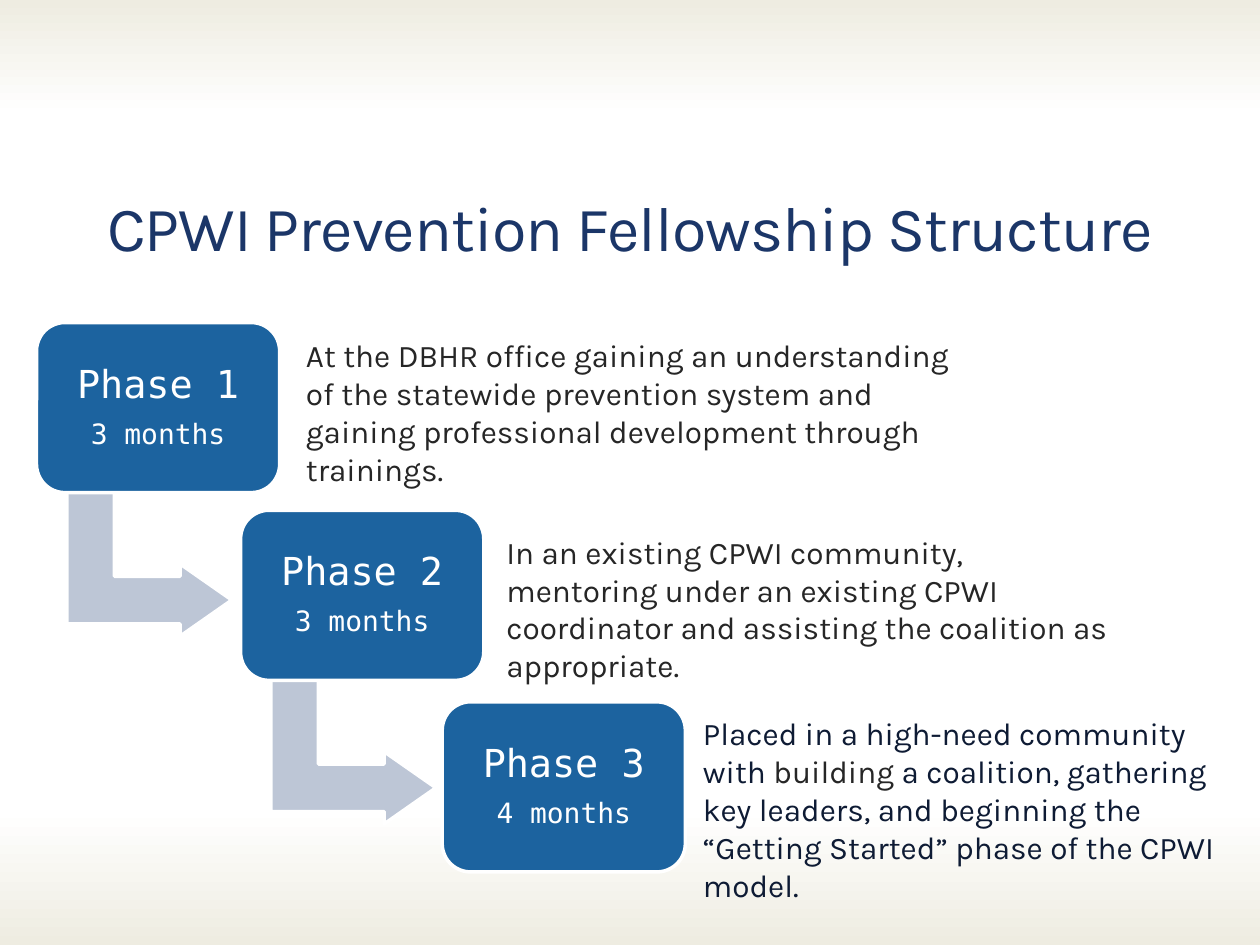
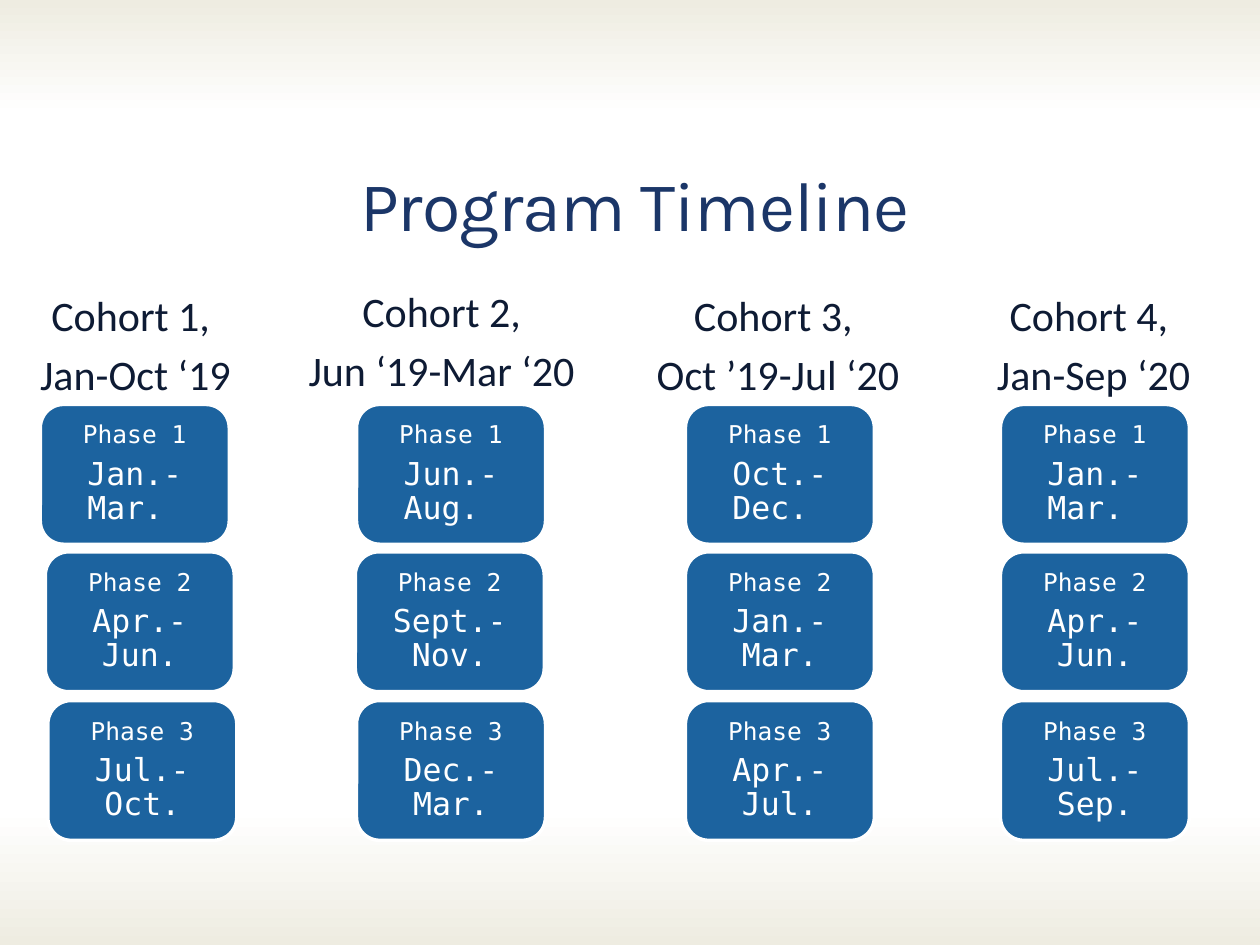
"""Build two slides on the structure and timeline of a prevention fellowship."""
import pptx
import pptx.dml.color
import pptx.enum.shapes
import pptx.enum.text
import pptx.util

Inches = pptx.util.Inches
Pt = pptx.util.Pt
SHAPE = pptx.enum.shapes.MSO_SHAPE
CENTER = pptx.enum.text.PP_ALIGN.CENTER
MIDDLE = pptx.enum.text.MSO_ANCHOR.MIDDLE
COLORS = {
    name: pptx.dml.color.RGBColor.from_string(value)
    for name, value in {
        "white": "FFFFFF",
        "sand": "EEECE1",
        "title": "1B3668",
        "navy": "0E1B34",
        "gray": "262626",
        "phase": "1C639F",
        "arrow": "BDC6D6",
    }.items()
}


def add_span(para, text, size, font, color):
    span = para.add_run()
    span.text = text
    span.font.size = Pt(size)
    span.font.name = font
    span.font.color.rgb = COLORS[color]
    return span


def add_outlined(page, kind, left, top, width, height, color):
    shape = page.shapes.add_shape(kind, Inches(left), Inches(top), Inches(width), Inches(height))
    shape.shadow.inherit = False
    shape.fill.solid()
    shape.fill.fore_color.rgb = COLORS[color]
    shape.line.color.rgb = COLORS["white"]
    shape.line.width = Pt(2)
    return shape


deck = pptx.Presentation()
deck.slide_width = Inches(10)
deck.slide_height = Inches(7.5)
layout = deck.slide_layouts[5]

titles = [
    ("CPWI Prevention Fellowship Structure", 36, 0.5, 1.17),
    ("Program Timeline", 40, 0.54, 0.99),
]
pages = []
for text, size, left, top in titles:
    page = deck.slides.add_slide(layout)
    pages.append(page)
    title = page.shapes.title
    title.left, title.top = Inches(left), Inches(top)
    title.width, title.height = Inches(9), Inches(1.25)
    title.text_frame.word_wrap = True
    title.text_frame.auto_size = pptx.enum.text.MSO_AUTO_SIZE.NONE
    title.text_frame.vertical_anchor = MIDDLE
    para = title.text_frame.paragraphs[0]
    para.alignment = CENTER
    span = add_span(para, text, size, "Karla", "title")
    span.font._element.set("spc", "-50")
structure, timeline = pages

for top, height, rotation in [(0, 0.92, 0), (6.42, 1.08, 180)]:
    band = structure.shapes.add_shape(
        SHAPE.RECTANGLE, 0, Inches(top), deck.slide_width, Inches(height)
    )
    band.shadow.inherit = False
    band.rotation = rotation
    band.line.fill.background()
    band.fill.gradient()
    band.fill.gradient_angle = 270
    for stop, color in zip(band.fill.gradient_stops, ("sand", "white")):
        stop.color.rgb = COLORS[color]
    layout.shapes.element.insert(2, band.element)

phases = [
    (0.29, 2.56, "3 months"),
    (1.91, 4.05, "3 months"),
    (3.51, 5.57, "4 months"),
]
phase_boxes = []
for number, (left, top, duration) in enumerate(phases, 1):
    if number < len(phases):
        arrow = add_outlined(
            structure, SHAPE.BENT_UP_ARROW, left + 0.32, top + 1.26, 1.15, 1.31, "arrow"
        )
        arrow.rotation = 90
        for index, value in enumerate((0.328, 0.25, 0.358)):
            arrow.adjustments[index] = value
    box = add_outlined(structure, SHAPE.ROUNDED_RECTANGLE, left, top, 1.93, 1.35, "phase")
    phase_boxes.append((box, [(f"Phase {number}", 22), (duration, 16)]))

descriptions = [
    (2.33, 2.62, 5.58, 1.01, [
        ("At the DBHR office gaining an understanding of the statewide prevention system "
         "and gaining professional development through trainings.", "gray"),
    ]),
    (3.92, 4.18, 5.08, 1.31, [
        ("In an existing CPWI community, mentoring under an existing CPWI coordinator "
         "and assisting the coalition as appropriate.", "gray"),
    ]),
    (5.48, 5.62, 4.52, 1.61, [
        ("Placed in a high-need community with ", "navy"),
        ("building", "gray"),
        (" a coalition, gathering key leaders, and beginning the “Getting Started” phase "
         "of the CPWI model.", "navy"),
    ]),
]
for left, top, width, height, spans in descriptions:
    box = structure.shapes.add_textbox(Inches(left), Inches(top), Inches(width), Inches(height))
    box.text_frame.word_wrap = True
    for text, color in spans:
        add_span(box.text_frame.paragraphs[0], text, 18, "Karla", color)

cohorts = [
    (0, 2.25, 2.15, ("Cohort 1, ", "Jan-Oct ‘19"),
     (0.32, 0.36, 0.38), ("Jan.-Mar. ", "Apr.-Jun.", "Jul.-Oct.")),
    (1.83, 2.22, 3.35, ("Cohort 2,", "Jun ‘19-Mar ‘20"),
     (2.83, 2.82, 2.83), ("Jun.-Aug. ", "Sept.-Nov.", "Dec.-Mar.")),
    (4.77, 2.25, 2.81, ("Cohort 3, ", "Oct ’19-Jul ‘20"),
     (5.44, 5.44, 5.44), ("Oct.-Dec. ", "Jan.-Mar.", "Apr.-Jul.")),
    (7.36, 2.25, 2.64, ("Cohort 4, ", "Jan-Sep ‘20"),
     (7.94, 7.94, 7.94), ("Jan.-Mar. ", "Apr.-Jun.", "Jul.-Sep.")),
]
phase_tops = (3.21, 4.38, 5.56)
for left, top, width, heading, box_lefts, periods in cohorts:
    box = timeline.shapes.add_textbox(Inches(left), Inches(top), Inches(width), Inches(0.91))
    frame = box.text_frame
    frame.word_wrap = True
    for index, text in enumerate(heading):
        para = frame.add_paragraph() if index else frame.paragraphs[0]
        para.alignment = CENTER
        if index:
            para.space_before = Pt(4.8)
        add_span(para, text, 24, "Calibri", "navy")
    for number, (box_left, box_top, period) in enumerate(zip(box_lefts, phase_tops, periods), 1):
        box = add_outlined(
            timeline, SHAPE.ROUNDED_RECTANGLE, box_left, box_top, 1.5, 1.11, "phase"
        )
        phase_boxes.append((box, [(f"Phase {number}", 14), (period, 18)]))

for box, lines in phase_boxes:
    frame = box.text_frame
    frame.word_wrap = True
    frame.vertical_anchor = MIDDLE
    frame.margin_left = frame.margin_right = Inches(0.09)
    frame.margin_top = frame.margin_bottom = Inches(0.09)
    for index, (text, size) in enumerate(lines):
        para = frame.add_paragraph() if index else frame.paragraphs[0]
        para.alignment = CENTER
        para.line_spacing = 0.9
        para.space_after = Pt(0.35 * size)
        add_span(para, text, size, "DejaVu Sans Mono", "white")

deck.save("out.pptx")
